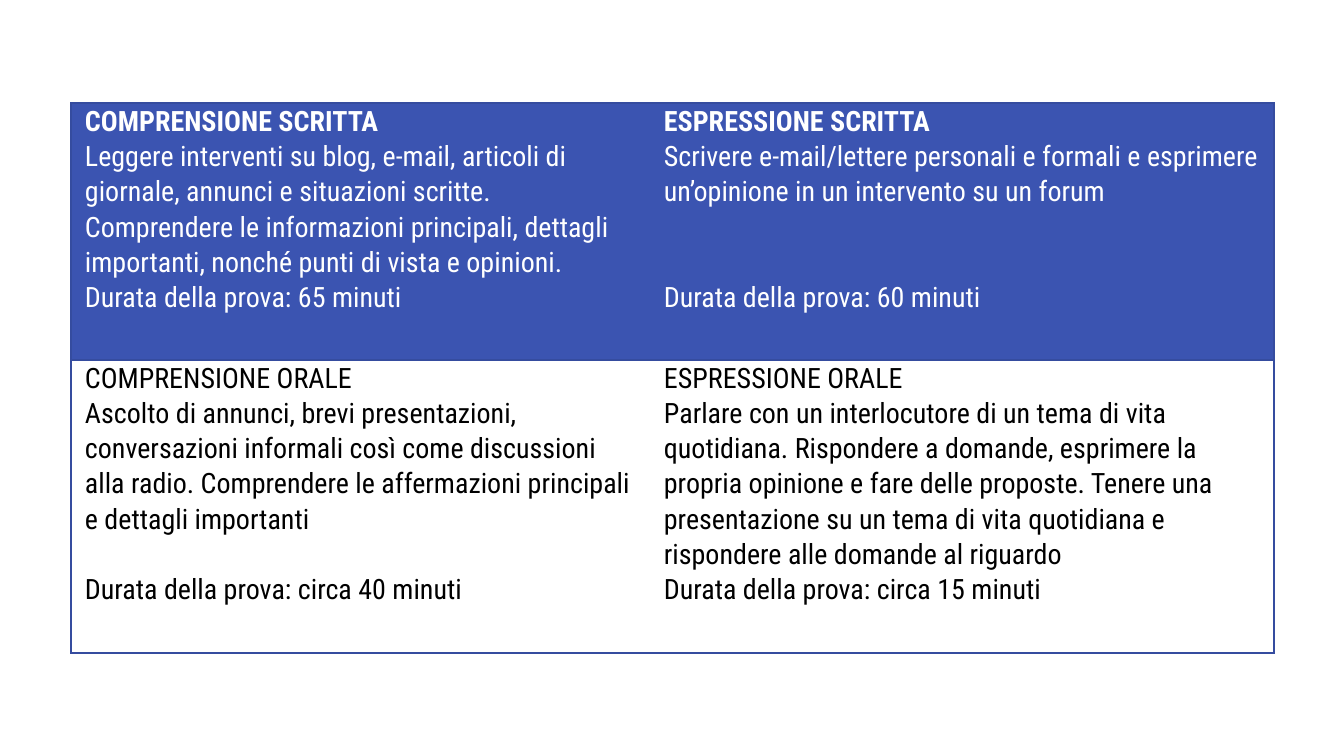
from lxml import etree
from pptx import Presentation
from pptx import util as u
from pptx.dml.color import RGBColor
from pptx.enum import text
from pptx.oxml import ns

BLUE = RGBColor(0x3B, 0x54, 0xB1)
BORDER = RGBColor(0x35, 0x4C, 0x9F)
WHITE = RGBColor(0xFF, 0xFF, 0xFF)
BLACK = RGBColor(0, 0, 0)
FONT, SIZE = "Roboto Condensed", u.Pt(20)
LINE_SPACING, LINE_PT = 1.07, 25.14

# (title, description, lines left free, duration)
EXAMS = [
    [
        ("COMPRENSIONE SCRITTA",
         "Leggere interventi su blog, e-mail, articoli di giornale, annunci e "
         "situazioni scritte. Comprendere le informazioni principali, dettagli "
         "importanti, nonché punti di vista e opinioni.",
         0, "Durata della prova: 65 minuti"),
        ("ESPRESSIONE SCRITTA",
         "Scrivere e-mail/lettere personali e formali e esprimere un’opinione "
         "in un intervento su un forum",
         2, "Durata della prova: 60 minuti"),
    ],
    [
        ("COMPRENSIONE ORALE",
         "Ascolto di annunci, brevi presentazioni, conversazioni informali così "
         "come discussioni alla radio. Comprendere le affermazioni principali e "
         "dettagli importanti",
         1, "Durata della prova: circa 40 minuti"),
        ("ESPRESSIONE ORALE",
         "Parlare con un interlocutore di un tema di vita quotidiana. Rispondere "
         "a domande, esprimere la propria opinione e fare delle proposte. Tenere "
         "una presentazione su un tema di vita quotidiana e rispondere alle "
         "domande al riguardo",
         0, "Durata della prova: circa 15 minuti"),
    ],
]
ROW_STYLES = [(BLUE, WHITE, True), (WHITE, BLACK, False)]  # fill, text, bold title

SLIDE_W, SLIDE_H = 1344, 756
LEFT, TOP = 71, 103
COL_W, ROW_H = (579, 624), (257, 293)
INSET = 14


def px(n):
    return u.Emu(round(n * 12192000 / SLIDE_W))


def set_borders(cell, visible):
    """Draw the sides named in visible (letters of LRTB) and clear the others."""
    tc_pr = cell._tc.get_or_add_tcPr()
    for i, side in enumerate("LRTB"):
        ln = etree.Element(ns.qn("a:ln" + side), w=str(u.Pt(1)))
        if side in visible:
            fill = etree.SubElement(ln, ns.qn("a:solidFill"))
            etree.SubElement(fill, ns.qn("a:srgbClr"), val=str(BORDER))
        else:
            etree.SubElement(ln, ns.qn("a:noFill"))
        tc_pr.insert(i, ln)


def write_cell(cell, exam, color, bold_title):
    title, description, free_lines, duration = exam
    cell.margin_left = cell.margin_right = px(INSET)
    cell.margin_top = cell.margin_bottom = 0
    cell.vertical_anchor = text.MSO_ANCHOR.TOP
    tf = cell.text_frame
    paragraphs = [(title, bold_title, 0), (description, False, 0),
                  (duration, False, free_lines)]
    for i, (words, bold, gap) in enumerate(paragraphs):
        p = tf.add_paragraph() if i else tf.paragraphs[0]
        p.line_spacing = LINE_SPACING
        p.space_before = u.Pt(gap * LINE_PT)
        r = p.add_run()
        r.text = words
        r.font.name, r.font.size, r.font.bold = FONT, SIZE, bold
        r.font.color.rgb = color


def main():
    prs = Presentation()
    prs.slide_width, prs.slide_height = px(SLIDE_W), px(SLIDE_H)
    s = prs.slides.add_slide(prs.slide_layouts[6])
    s.background.fill.solid()
    s.background.fill.fore_color.rgb = WHITE

    table = s.shapes.add_table(len(ROW_H), len(COL_W), px(LEFT), px(TOP),
                               px(sum(COL_W)), px(sum(ROW_H))).table
    table.first_row = table.horz_banding = False
    for column, width in zip(table.columns, COL_W):
        column.width = px(width)
    for row, height in zip(table.rows, ROW_H):
        row.height = px(height)

    for i, (exams, (fill, color, bold)) in enumerate(zip(EXAMS, ROW_STYLES)):
        for j, exam in enumerate(exams):
            cell = table.cell(i, j)
            write_cell(cell, exam, color, bold)
            cell.fill.solid()
            cell.fill.fore_color.rgb = fill
            set_borders(cell, "T" + "LR"[j] + ("B" if i else ""))
    prs.save("out.pptx")


if __name__ == "__main__":
    main()
